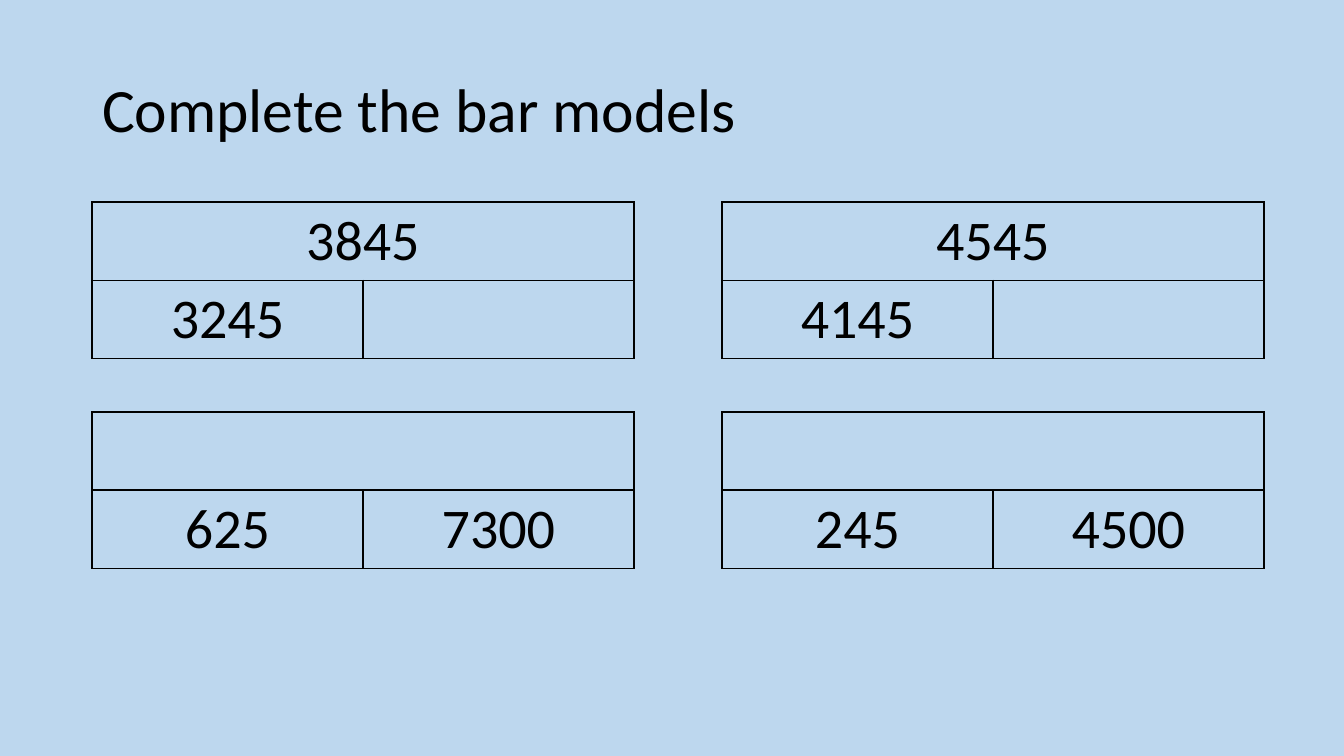
"""Build a slide of four bar models to complete."""
from lxml import etree
from pptx import Presentation
from pptx import util as u
from pptx.dml.color import RGBColor
from pptx.enum import text
from pptx.oxml import ns

TITLE = "Complete the bar models"
BAR_MODELS = [
    [("3845", "3245", ""), ("4545", "4145", "")],
    [("", "625", "7300"), ("", "245", "4500")],
]

BLACK = RGBColor(0x00, 0x00, 0x00)
PALE_BLUE = RGBColor(0xBD, 0xD7, 0xEE)
FONT = "Calibri"

SLIDE_WIDTH, SLIDE_HEIGHT = 1344, 756
TITLE_BOX = (92, 40, 1159, 146)
FIRST_LEFT, FIRST_TOP = 92, 202
STEP_X, STEP_Y = 630, 210
PART_WIDTH, BAR_HEIGHT = 271, 78


def px(length):
    return u.Emu(round(length * 914400 / 100.8))


def add_text(paragraph, words, size, alignment):
    paragraph.alignment = alignment
    if not words:
        return
    run = paragraph.add_run()
    run.text = words
    run.font.name = FONT
    run.font.size = u.Pt(size)
    run.font.bold = False
    run.font.color.rgb = BLACK


def add_borders(cell):
    properties = cell._tc.get_or_add_tcPr()
    for side in ("lnL", "lnR", "lnT", "lnB"):
        line = etree.SubElement(properties, ns.qn(f"a:{side}"), w=str(u.Pt(1)))
        fill = etree.SubElement(line, ns.qn("a:solidFill"))
        etree.SubElement(fill, ns.qn("a:srgbClr"), val=str(BLACK))


def add_bar_model(slide, left, top, values):
    frame = slide.shapes.add_table(
        2, 2, px(left), px(top), px(2 * PART_WIDTH), px(2 * BAR_HEIGHT))
    table = frame.table
    table.first_row = table.horz_banding = False
    for column in table.columns:
        column.width = px(PART_WIDTH)
    for row in table.rows:
        row.height = px(BAR_HEIGHT)
    for cell in table.iter_cells():
        add_borders(cell)
        cell.fill.background()
    table.cell(0, 0).merge(table.cell(0, 1))
    for (row, column), value in zip([(0, 0), (1, 0), (1, 1)], values):
        paragraph = table.cell(row, column).text_frame.paragraphs[0]
        add_text(paragraph, value, 40, text.PP_ALIGN.CENTER)


def add_title(slide):
    title = slide.shapes.title
    title.left, title.top, title.width, title.height = map(px, TITLE_BOX)
    frame = title.text_frame
    frame.auto_size = text.MSO_AUTO_SIZE.NONE
    frame.vertical_anchor = text.MSO_ANCHOR.MIDDLE
    paragraph = frame.paragraphs[0]
    paragraph.line_spacing = 0.9
    add_text(paragraph, TITLE, 44, text.PP_ALIGN.LEFT)


def main():
    presentation = Presentation()
    presentation.slide_width = px(SLIDE_WIDTH)
    presentation.slide_height = px(SLIDE_HEIGHT)
    slide = presentation.slides.add_slide(presentation.slide_layouts[5])
    slide.background.fill.solid()
    slide.background.fill.fore_color.rgb = PALE_BLUE
    add_title(slide)
    for row, models in enumerate(BAR_MODELS):
        for column, values in enumerate(models):
            add_bar_model(slide, FIRST_LEFT + column * STEP_X,
                          FIRST_TOP + row * STEP_Y, values)
    presentation.save("out.pptx")


if __name__ == "__main__":
    main()
